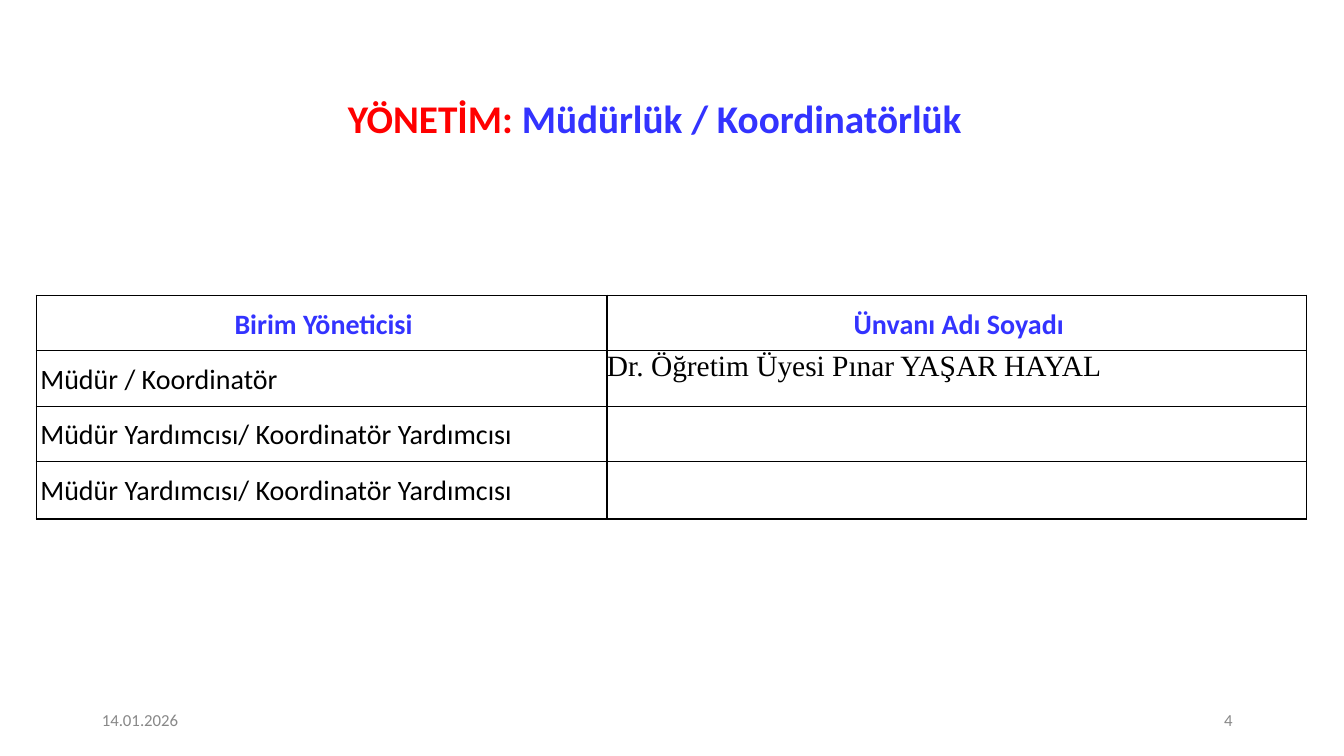
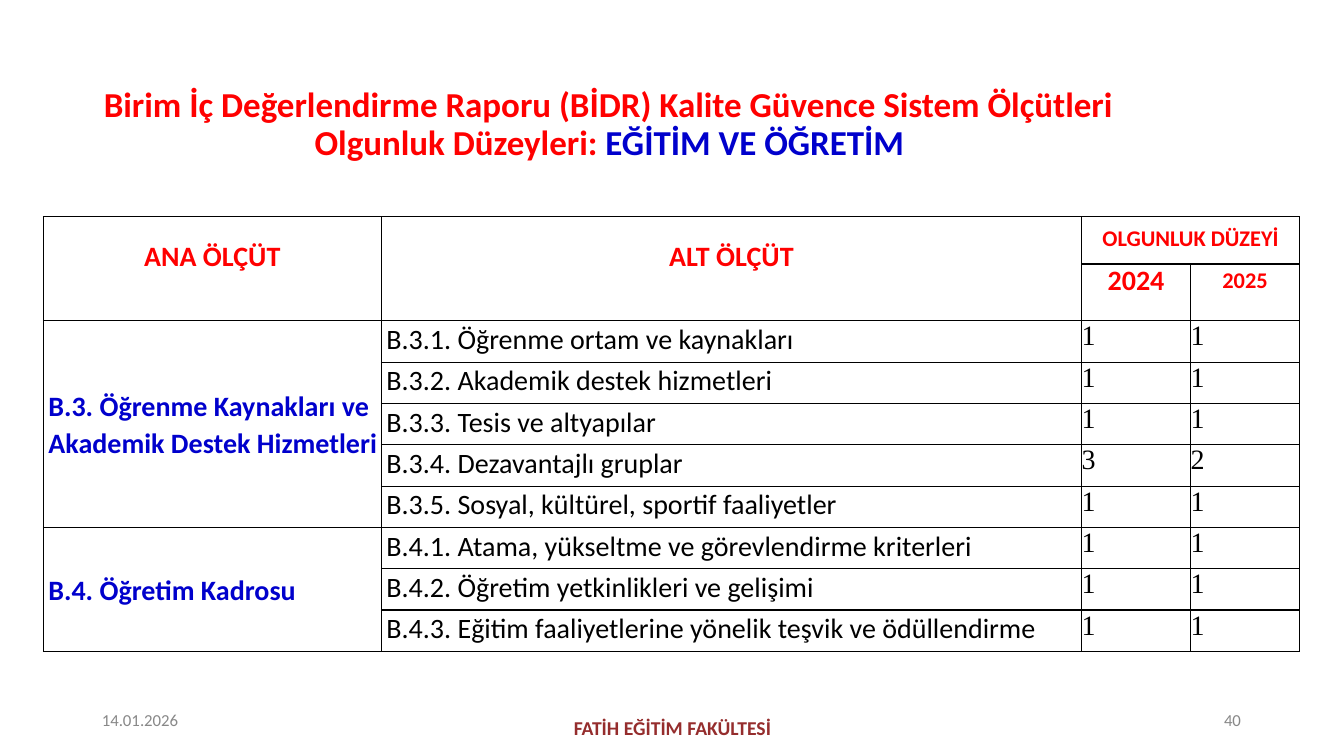
from lxml import etree
from pptx import Presentation
from pptx.dml.color import RGBColor
from pptx.enum.text import MSO_ANCHOR, PP_ALIGN
from pptx.oxml.ns import qn
from pptx.util import Inches, Pt

LEFT, CENTER = PP_ALIGN.LEFT, PP_ALIGN.CENTER
TOP, MIDDLE = MSO_ANCHOR.TOP, MSO_ANCHOR.MIDDLE

RED = RGBColor(0xFF, 0x00, 0x00)
BRIGHT_BLUE = RGBColor(0x33, 0x33, 0xFF)
DEEP_BLUE = RGBColor(0x00, 0x00, 0xCC)
BLACK = RGBColor(0x00, 0x00, 0x00)
GRAY = RGBColor(0x88, 0x88, 0x88)
MAROON = RGBColor(0x95, 0x2D, 0x2D)

SANS, SERIF = "Calibri", "Times New Roman"
DATE = "14.01.2026"
FACULTY = "FATİH EĞİTİM FAKÜLTESİ"
BLANK_LAYOUT = 6

# Boxes: left, top, width, height in inches
SLIDE_SIZE = (13.33, 7.5)
TITLE_BOX = (0.36, 0.54, 11.42, 1.17)
DATE_BOX = (1.01, 7.07, 1, 0.2)
NUMBER_BOX = (12.14, 7.07, 0.4, 0.2)
FACULTY_BOX = (5.68, 7.14, 1.98, 0.22)
MANAGERS_BOX = (0.36, 2.93, 12.6, 2.22)
CRITERIA_BOX = (0.43, 2.15, 12.46, 4.31)

CRITERIA = [
    ("B.3. Öğrenme Kaynakları ve Akademik Destek Hizmetleri", [
        ("B.3.1. Öğrenme ortam ve kaynakları", 1, 1),
        ("B.3.2. Akademik destek hizmetleri", 1, 1),
        ("B.3.3. Tesis ve altyapılar", 1, 1),
        ("B.3.4. Dezavantajlı gruplar", 3, 2),
        ("B.3.5. Sosyal, kültürel, sportif faaliyetler", 1, 1),
    ]),
    ("B.4. Öğretim Kadrosu", [
        ("B.4.1. Atama, yükseltme ve görevlendirme kriterleri", 1, 1),
        ("B.4.2. Öğretim yetkinlikleri ve gelişimi", 1, 1),
        ("B.4.3. Eğitim faaliyetlerine yönelik teşvik ve ödüllendirme", 1, 1),
    ]),
]


def add_span(para, text, size, color, bold=False, font=SANS):
    span = para.add_run()
    span.text = text
    span.font.name = font
    span.font.size = Pt(size)
    span.font.bold = bold
    span.font.color.rgb = color


def add_text_box(page, box, inset_top=0):
    """Add an empty text box and return its first paragraph."""
    frame = page.shapes.add_textbox(*map(Inches, box)).text_frame
    frame.word_wrap = True
    frame.margin_left = frame.margin_right = frame.margin_bottom = 0
    frame.margin_top = Inches(inset_top)
    return frame.paragraphs[0]


def add_title(page, spans, size, inset_top, margin, indent=0, line=None):
    para = add_text_box(page, TITLE_BOX, inset_top)
    properties = para._p.get_or_add_pPr()
    properties.set("marL", str(Inches(margin)))
    properties.set("indent", str(Inches(indent)))
    if line:
        para.line_spacing = Pt(line)
    for text, color in spans:
        add_span(para, text, size, color, bold=True)


def add_footer(page, number, faculty=None):
    for box, text in ((DATE_BOX, DATE), (NUMBER_BOX, number)):
        para = add_text_box(page, box)
        para.line_spacing = Pt(12.4)
        add_span(para, text, 12, GRAY)
    if faculty:
        para = add_text_box(page, FACULTY_BOX)
        para.alignment = CENTER
        para.line_spacing = Pt(14.3)
        add_span(para, faculty, 14, MAROON, bold=True)


def add_grid(page, box, columns, rows):
    """Add a plain table whose columns and rows share the box by weight."""
    table = page.shapes.add_table(len(rows), len(columns), *map(Inches, box)).table
    table.first_row = table.horz_banding = False
    for column, weight in zip(table.columns, columns):
        column.width = Inches(box[2] * weight / sum(columns))
    for row, weight in zip(table.rows, rows):
        row.height = Inches(box[3] * weight / sum(rows))
    for cell in table.iter_cells():
        cell.margin_left = cell.margin_right = 0
        cell.margin_top = cell.margin_bottom = 0
        add_borders(cell)
        cell.fill.background()
    return table


def add_borders(cell):
    properties = cell._tc.get_or_add_tcPr()
    for side in ("a:lnL", "a:lnR", "a:lnT", "a:lnB"):
        line = etree.SubElement(properties, qn(side), w=str(Pt(1)))
        fill = etree.SubElement(line, qn("a:solidFill"))
        etree.SubElement(fill, qn("a:srgbClr"), val=str(BLACK))


def fill_cell(cell, text, size=20, color=BLACK, bold=False, font=SANS,
              align=LEFT, anchor=TOP, left=0, top=0):
    cell.margin_left, cell.margin_top = Inches(left), Inches(top)
    cell.vertical_anchor = anchor
    para = cell.text_frame.paragraphs[0]
    para.alignment = align
    add_span(para, text, size, color, bold, font)
    return para


def add_managers_table(page, box):
    table = add_grid(page, box, (5.66, 6.94), (0.55, 0.55, 0.55, 0.57))
    # Header row
    for column, text in enumerate(("Birim Yöneticisi", "Ünvanı Adı Soyadı")):
        fill_cell(table.cell(0, column), text, color=BRIGHT_BLUE, bold=True,
                  align=CENTER, left=0.04, top=0.12)
    # Roles
    deputy = "Müdür Yardımcısı/ Koordinatör Yardımcısı"
    for row, role in enumerate(("Müdür / Koordinatör", deputy, deputy), 1):
        fill_cell(table.cell(row, 0), role, left=0.04, top=0.12)
    # Name of the head
    fill_cell(table.cell(1, 1), "Dr. Öğretim Üyesi Pınar YAŞAR HAYAL",
              size=21, font=SERIF)


def add_criteria_table(page, box):
    count = sum(len(items) for _, items in CRITERIA)
    table = add_grid(page, box, (3.35, 6.94, 1.08, 1.08),
                     (0.47, 0.56) + (0.41,) * count)
    # Two header rows: row, column, last row, last column, text, size, top inset
    headers = (
        (0, 0, 1, 0, "ANA ÖLÇÜT", 20, 0.23),
        (0, 1, 1, 1, "ALT ÖLÇÜT", 20, 0.23),
        (0, 2, 0, 3, "OLGUNLUK DÜZEYİ", 16, 0.08),
        (1, 2, 1, 2, "2024", 20, 0),
        (1, 3, 1, 3, "2025", 16, 0.03),
    )
    for row, column, last_row, last_column, text, size, top in headers:
        cell = table.cell(row, column)
        if (row, column) != (last_row, last_column):
            cell.merge(table.cell(last_row, last_column))
        fill_cell(cell, text, size, RED, bold=True, align=CENTER, top=top)
    # Groups with their criteria and scores
    row = 2
    for group, items in CRITERIA:
        cell = table.cell(row, 0)
        cell.merge(table.cell(row + len(items) - 1, 0))
        para = fill_cell(cell, group, color=DEEP_BLUE, bold=True,
                         anchor=MIDDLE, left=0.05)
        para.line_spacing = 1.07
        for text, *scores in items:
            fill_cell(table.cell(row, 1), text, left=0.05, top=0.02)
            for column, score in enumerate(scores, 2):
                fill_cell(table.cell(row, column), str(score), font=SERIF)
            row += 1


def build_managers_page(page):
    add_title(page, [("YÖNETİM: ", RED), ("Müdürlük / Koordinatörlük", BRIGHT_BLUE)],
              size=28, inset_top=0.4, margin=3.09)
    add_footer(page, "4")
    add_managers_table(page, MANAGERS_BOX)


def build_criteria_page(page):
    add_title(page, [("Birim İç Değerlendirme Raporu (BİDR) Kalite Güvence Sistem "
                      "Ölçütleri Olgunluk Düzeyleri: ", RED),
                     ("EĞİTİM VE ÖĞRETİM", DEEP_BLUE)],
              size=25, inset_top=0.32, margin=2.76, indent=-2.09, line=27)
    add_footer(page, "40", FACULTY)
    add_criteria_table(page, CRITERIA_BOX)


def main():
    deck = Presentation()
    deck.slide_width, deck.slide_height = map(Inches, SLIDE_SIZE)
    for build_page in (build_managers_page, build_criteria_page):
        build_page(deck.slides.add_slide(deck.slide_layouts[BLANK_LAYOUT]))
    deck.save("out.pptx")


if __name__ == "__main__":
    main()
